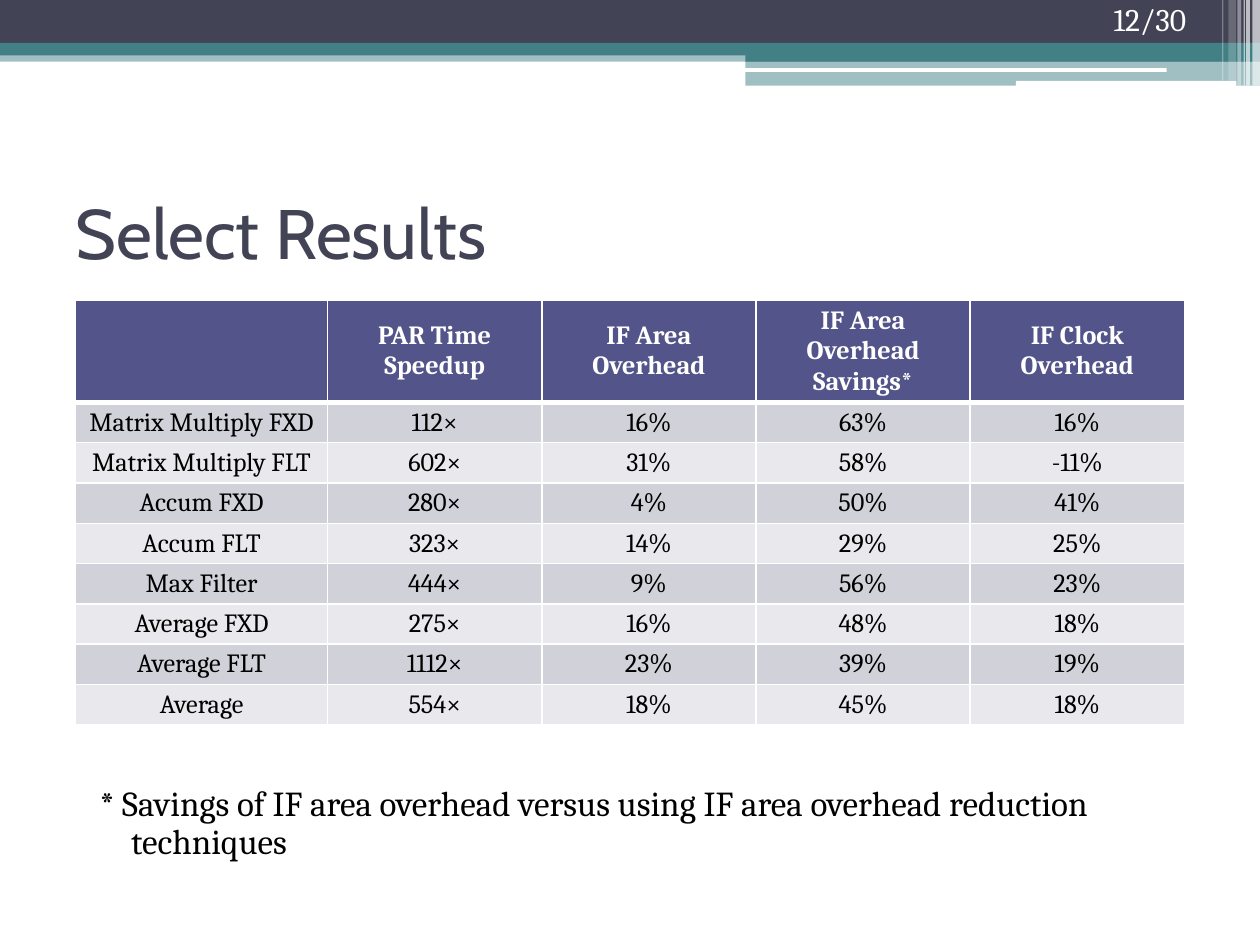
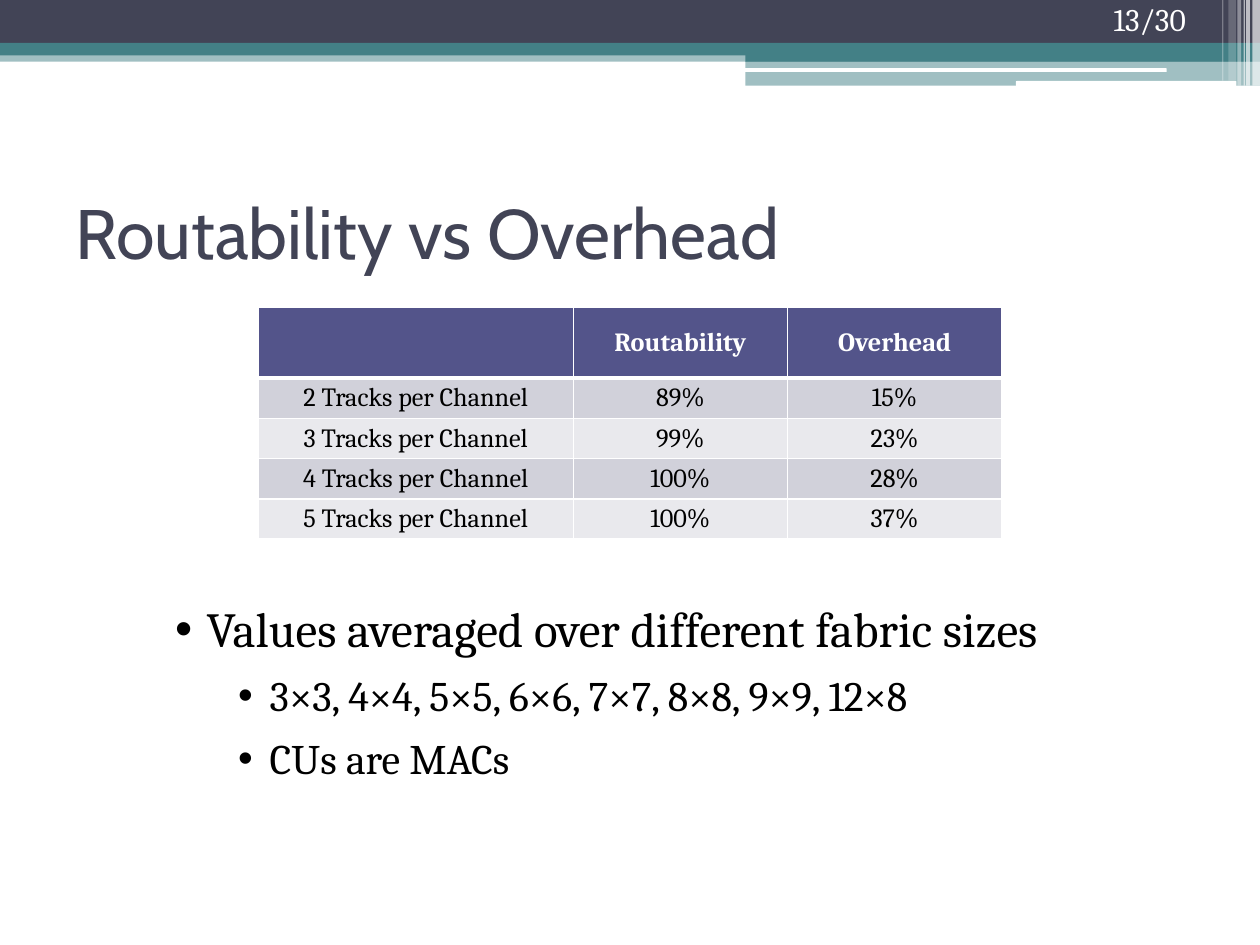
"""Build two result slides that share a banded header, a title style and a table style."""
from lxml import etree
from pptx import Presentation
from pptx.dml.color import RGBColor
from pptx.enum.shapes import MSO_SHAPE
from pptx.enum.text import MSO_ANCHOR, MSO_AUTO_SIZE, PP_ALIGN
from pptx.oxml.ns import qn
from pptx.util import Pt

RECT = MSO_SHAPE.RECTANGLE
ROUNDED = MSO_SHAPE.ROUNDED_RECTANGLE
MIDDLE = MSO_ANCHOR.MIDDLE
TOP = MSO_ANCHOR.TOP
LEFT = PP_ALIGN.LEFT
CENTER = PP_ALIGN.CENTER
NO_FIT = MSO_AUTO_SIZE.NONE

SLATE = RGBColor(0x42, 0x44, 0x56)
TEAL = RGBColor(0x43, 0x80, 0x86)
WHITE = RGBColor(0xFF, 0xFF, 0xFF)
BLACK = RGBColor(0, 0, 0)
HEADER = RGBColor(0x53, 0x54, 0x8A)
ROW_TINTS = (RGBColor(0xE9, 0xE9, 0xED), RGBColor(0xD1, 0xD1, 0xDA))

TITLE_FONT = "Cabin"
BODY_FONT = "Cambria"
PAGE_WIDTH, PAGE_HEIGHT = 720, 540
TITLE_AREA = (36, 90, 648, 84.24)
HEADER_HEIGHT, ROW_HEIGHT = 40.32, 23.04
VALUE_WIDTH = 122.4
STEP = 18

BANDS = [
    (RECT, (0, 28.8, 720, 6.48), TEAL, 50),
    (RECT, (0, 0, 720, 24.48), SLATE, 100),
    (RECT, (0, 24.48, 720, 7.2), TEAL, 100),
    (RECT, (426, 28, 294, 7.2), TEAL, 100),
    (RECT, (426, 35, 294, 14), TEAL, 50),
    (ROUNDED, (425.5, 39, 241.2, 2.16), WHITE, 100),
    (ROUNDED, (580.5, 46.3, 126, 2.88), WHITE, 100),
]
STRIPES = [
    (715.68, 4.32, 48.96, 65),
    (712.08, 2.16, 48.96, 65),
    (710.64, 0.72, 48.96, 60),
    (707.04, 2.16, 48.96, 40),
    (702, 4.32, 46.08, 20),
    (698.4, 0.72, 46.08, 30),
]

SELECT_RESULTS = [
    ("", "PAR Time Speedup", "IF Area Overhead", "IF Area Overhead Savings*", "IF Clock Overhead"),
    ("Matrix Multiply FXD", "112×", "16%", "63%", "16%"),
    ("Matrix Multiply FLT", "602×", "31%", "58%", "-11%"),
    ("Accum FXD", "280×", "4%", "50%", "41%"),
    ("Accum FLT", "323×", "14%", "29%", "25%"),
    ("Max Filter", "444×", "9%", "56%", "23%"),
    ("Average FXD", "275×", "16%", "48%", "18%"),
    ("Average FLT", "1112×", "23%", "39%", "19%"),
    ("Average", "554×", "18%", "45%", "18%"),
]
ROUTABILITY = [
    ("", "Routability", "Overhead"),
    ("2 Tracks per Channel", "89%", "15%"),
    ("3 Tracks per Channel", "99%", "23%"),
    ("4 Tracks per Channel", "100%", "28%"),
    ("5 Tracks per Channel", "100%", "37%"),
]
FOOTNOTE = [(0, 20, "* Savings of IF area overhead versus using IF area overhead reduction techniques")]
FABRIC_NOTES = [
    (0, 28, "Values averaged over different fabric sizes"),
    (1, 24, "3×3, 4×4, 5×5, 6×6, 7×7, 8×8, 9×9, 12×8"),
    (1, 24, "CUs are MACs"),
]


def place(box, area):
    """Move and size a box to an area given in points."""
    box.left, box.top, box.width, box.height = map(Pt, area)


def add_span(para, text, size, color, font=BODY_FONT, bold=False):
    """Add one formatted run to a paragraph."""
    span = para.add_run()
    span.text = text
    span.font.name = font
    span.font.size = Pt(size)
    span.font.bold = bold
    span.font.color.rgb = color


def add_band(page, kind, area, color, opacity):
    """Add a plain filled shape with the given opacity in percent."""
    band = page.shapes.add_shape(kind, *map(Pt, area))
    band.shadow.inherit = False
    band.line.fill.background()
    band.fill.solid()
    band.fill.fore_color.rgb = color
    if opacity < 100:
        tint = band.fill._xPr.find(".//" + qn("a:srgbClr"))
        etree.SubElement(tint, qn("a:alpha"), val=str(opacity * 1000))


def add_header(page, number):
    """Add the bands, the stripes at the right edge and the page number."""
    for band in BANDS:
        add_band(page, *band)
    for left, width, height, opacity in STRIPES:
        add_band(page, RECT, (left, 0, width, height), WHITE, opacity)
    box = page.shapes.add_textbox(*map(Pt, (629.28, 0, 71.28, 25.2)))
    frame = box.text_frame
    frame.word_wrap = True
    frame.margin_top = 0
    add_span(frame.paragraphs[0], f"{number}/30", 18, WHITE)


def add_page(deck, title, number):
    """Add a page with the shared header and its title."""
    page = deck.slides.add_slide(deck.slide_layouts[1])
    add_header(page, number)
    box = page.shapes.title
    place(box, TITLE_AREA)
    frame = box.text_frame
    frame.auto_size = NO_FIT
    frame.vertical_anchor = MIDDLE
    para = frame.paragraphs[0]
    para.alignment = LEFT
    add_span(para, title, 40, SLATE, TITLE_FONT)
    return page


def set_borders(cell, top, bottom):
    """Give a cell white borders, with top and bottom widths in points."""
    properties = cell._tc.get_or_add_tcPr()
    for side, width in (("L", 1), ("R", 1), ("T", top), ("B", bottom)):
        line = etree.SubElement(properties, qn("a:ln" + side), w=str(Pt(width)))
        fill = etree.SubElement(line, qn("a:solidFill"))
        etree.SubElement(fill, qn("a:srgbClr"), val=str(WHITE))


def fill_cell(cell, text, row):
    """Format a table cell by its row number and write its text."""
    is_header = row == 0
    set_borders(cell, 3 if row == 1 else 1, 3 if is_header else 1)
    cell.fill.solid()
    cell.fill.fore_color.rgb = HEADER if is_header else ROW_TINTS[row % 2]
    cell.vertical_anchor = MIDDLE
    cell.margin_left = cell.margin_right = Pt(5.76)
    cell.margin_top = cell.margin_bottom = Pt(2.3)
    para = cell.text_frame.paragraphs[0]
    para.alignment = CENTER
    if text:
        add_span(para, text, 15, WHITE if is_header else BLACK, bold=is_header)


def add_results(page, rows, top, label_width):
    """Add a horizontally centred table with a label column and value columns."""
    widths = [label_width] + [VALUE_WIDTH] * (len(rows[0]) - 1)
    heights = [HEADER_HEIGHT] + [ROW_HEIGHT] * (len(rows) - 1)
    area = ((PAGE_WIDTH - sum(widths)) / 2, top, sum(widths), sum(heights))
    table = page.shapes.add_table(len(rows), len(widths), *map(Pt, area)).table
    for column, width in zip(table.columns, widths):
        column.width = Pt(width)
    for index, (row, height) in enumerate(zip(rows, heights)):
        table.rows[index].height = Pt(height)
        for column, text in enumerate(row):
            fill_cell(table.cell(index, column), text, index)


def fill_body(page, area, notes, bullet=None):
    """Write notes of (level, size, text) into the body placeholder."""
    box = page.placeholders[1]
    place(box, area)
    frame = box.text_frame
    frame.auto_size = NO_FIT
    frame.vertical_anchor = TOP
    for index, (level, size, text) in enumerate(notes):
        para = frame.add_paragraph() if index else frame.paragraphs[0]
        para.level = level
        para.alignment = LEFT
        para.line_spacing = 0.9
        para.space_before = Pt(10)
        properties = para._p.get_or_add_pPr()
        properties.set("marL", str(Pt(STEP + 2 * STEP * level)))
        properties.set("indent", str(Pt(-STEP)))
        if bullet:
            etree.SubElement(properties, qn("a:buChar"), char=bullet)
        else:
            etree.SubElement(properties, qn("a:buNone"))
        add_span(para, text, size, BLACK)


def main():
    """Build and save the deck."""
    deck = Presentation()
    deck.slide_width, deck.slide_height = Pt(PAGE_WIDTH), Pt(PAGE_HEIGHT)

    page = add_page(deck, "Select Results", 12)
    add_results(page, SELECT_RESULTS, 171.36, 144)
    fill_body(page, (49.68, 445.68, 620.64, 64.8), FOOTNOTE)

    page = add_page(deck, "Routability vs Overhead", 13)
    add_results(page, ROUTABILITY, 175.68, 180)
    fill_body(page, (92.88, 342, 573.12, 150.48), FABRIC_NOTES, "•")

    deck.save("out.pptx")


if __name__ == "__main__":
    main()
